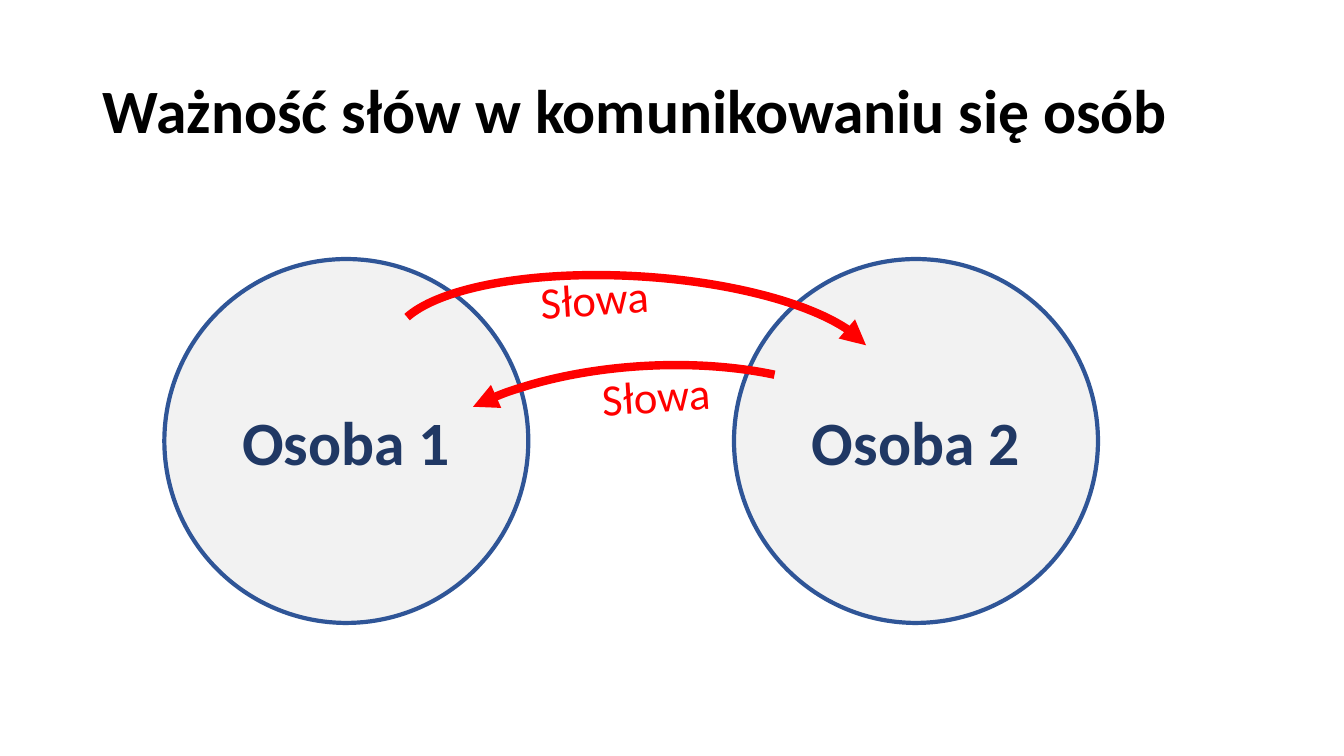
from collections import namedtuple
from dataclasses import dataclass

from lxml.etree import SubElement
from pptx import Presentation
from pptx.dml.color import RGBColor as Color
from pptx.enum.shapes import MSO_SHAPE as Shape
from pptx.enum.text import MSO_ANCHOR as Anchor, MSO_AUTO_SIZE as AutoSize, PP_ALIGN as Align
from pptx.oxml.ns import qn
from pptx.util import Inches, Pt

CELL = 0.1  # side of one grid square, in inches
Box = namedtuple("Box", "left top width height")


@dataclass(frozen=True)
class Theme:
    font: str = "Calibri"
    title: Color = Color.from_string("000000")
    person_text: Color = Color.from_string("203864")
    person_fill: Color = Color.from_string("F2F2F2")
    person_line: Color = Color.from_string("2F5597")
    words: Color = Color.from_string("FF0000")
    heading_size: Pt = Pt(44)
    words_size: Pt = Pt(32)
    person_width: Pt = Pt(3)
    arrow_width: Pt = Pt(6)


THEME = Theme()
TITLE_BOX = Box(9.2, 4, 115, 14.5)
DIALOGUE_BOX = Box(16.3, 25.7, 92.6, 36.1)


def set_all(target, values):
    for name, value in values.items():
        setattr(target, name, value)


def cells(box):
    return [Inches(length * CELL) for length in box]


def inside(region, left, top, width, height):
    """Box given in grid squares from the region's corner."""
    return Box(region.left + left, region.top + top, width, height)


def write(shape, text, color, size, bold, align, frame_format):
    set_all(shape.text_frame, frame_format)
    para = shape.text_frame.paragraphs[0]
    para.alignment = align
    span = para.add_run()
    span.text = text
    set_all(span.font, {"name": THEME.font, "size": size, "bold": bold})
    span.font.color.rgb = color
    return para


def outline(shape, color, width):
    shape.shadow.inherit = False
    shape.line.color.rgb = color
    shape.line.width = width


def add_title(page, box, text):
    title = page.shapes.title
    set_all(title, dict(zip(Box._fields, cells(box))))
    para = write(title, text, THEME.title, THEME.heading_size, True, Align.LEFT,
                 {"vertical_anchor": Anchor.MIDDLE, "word_wrap": True,
                  "auto_size": AutoSize.NONE})
    para.line_spacing = 0.9


def add_person(page, box, name):
    circle = page.shapes.add_shape(Shape.OVAL, *cells(box))
    circle.fill.solid()
    circle.fill.fore_color.rgb = THEME.person_fill
    outline(circle, THEME.person_line, THEME.person_width)
    write(circle, name, THEME.person_text, THEME.heading_size, True, Align.CENTER,
          {"vertical_anchor": Anchor.MIDDLE, "word_wrap": True})


def add_arrow(page, box, rotation, angles, flipped):
    arc = page.shapes.add_shape(Shape.ARC, *cells(box))
    arc.rotation = rotation
    for index, angle in enumerate(angles):
        arc.adjustments[index] = angle
    arc.fill.background()
    outline(arc, THEME.words, THEME.arrow_width)
    # Arrowhead and mirroring
    properties = arc._element.spPr
    SubElement(properties.find(qn("a:ln")), qn("a:tailEnd"), type="triangle")
    if flipped:
        properties.find(qn("a:xfrm")).set("flipV", "1")


def add_label(page, box, text):
    label = page.shapes.add_textbox(*cells(box))
    label.rotation = 356.4
    write(label, text, THEME.words, THEME.words_size, False, Align.LEFT,
          {"word_wrap": False, "auto_size": AutoSize.SHAPE_TO_FIT_TEXT})


def add_dialogue(page, box):
    # Two people, one at each end of the region
    size = box.height
    for left, name in ((box.width - size, "Osoba 2"), (0, "Osoba 1")):
        add_person(page, inside(box, left, 0, size, size), name)

    # Words going back and forth
    add_arrow(page, inside(box, 24.1, 10.6, 47.9, 20.4), 176.6, (128.03, 202.31), True)
    add_arrow(page, inside(box, 22.7, 1.7, 47.9, 15.7), 183.4, (3.68, 104.47), False)
    for left, top in ((36.3, 0.7), (42.4, 10.3)):
        add_label(page, inside(box, left, top, 12.9, 6.4), "Słowa")


def main():
    deck = Presentation()
    set_all(deck, {"slide_width": Inches(13.33), "slide_height": Inches(7.5)})
    page = deck.slides.add_slide(deck.slide_layouts.get_by_name("Title Only"))
    add_title(page, TITLE_BOX, "Ważność słów w komunikowaniu się osób")
    add_dialogue(page, DIALOGUE_BOX)
    deck.save("out.pptx")


if __name__ == "__main__":
    main()
